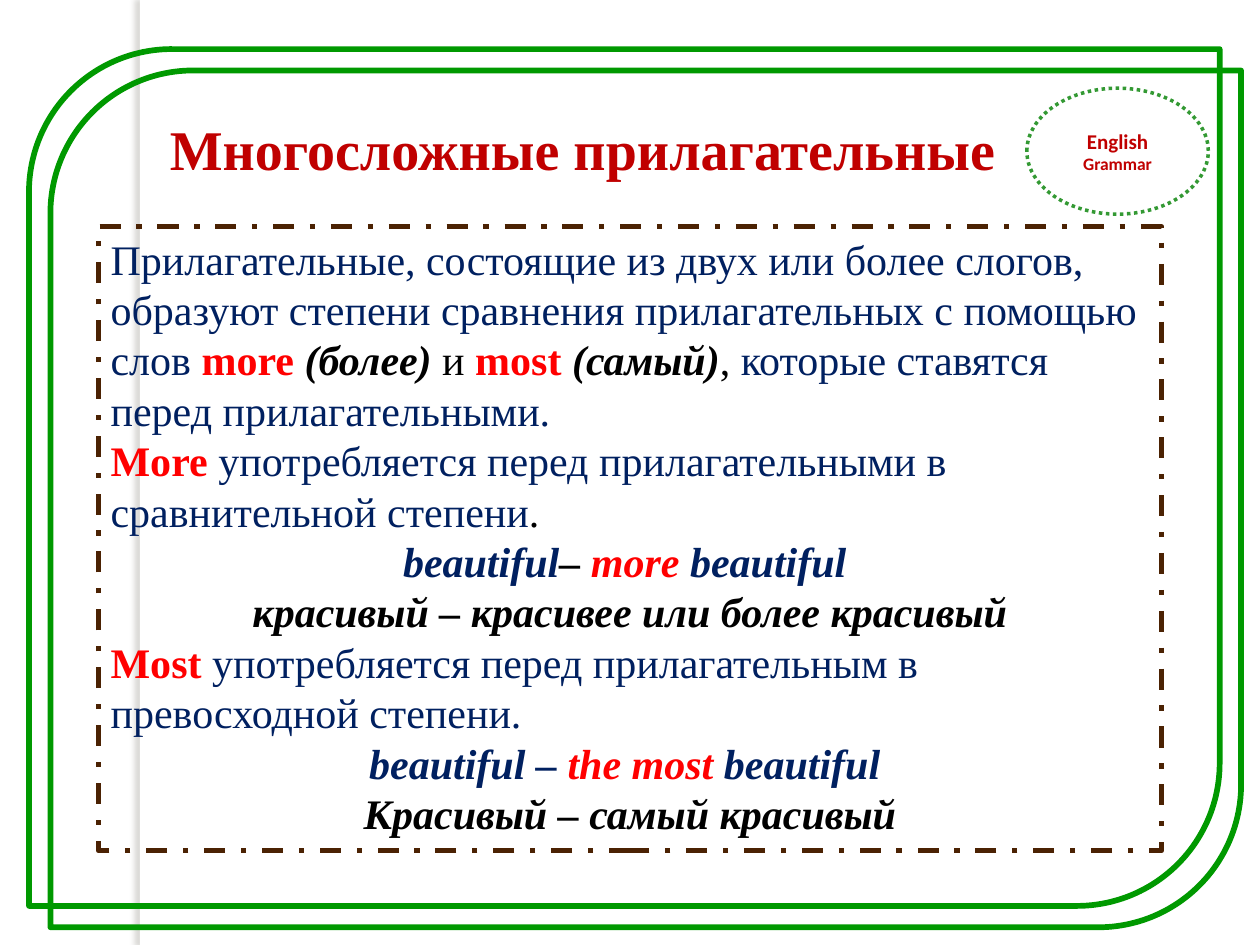
from lxml import etree
from pptx import Presentation
from pptx.dml.color import RGBColor
from pptx.enum.dml import MSO_LINE_DASH_STYLE as DASH
from pptx.enum.shapes import MSO_SHAPE as SHAPE
from pptx.enum.text import MSO_ANCHOR as ANCHOR, MSO_AUTO_SIZE as AUTO, PP_ALIGN as ALIGN
from pptx.oxml.ns import qn
from pptx.util import Inches, Pt

WHITE = RGBColor(0xFF, 0xFF, 0xFF)
BLACK = RGBColor(0, 0, 0)
NAVY = RGBColor(0x00, 0x20, 0x60)
RED = RGBColor(0xFF, 0, 0)
CRIMSON = RGBColor(0xC0, 0, 0)
GREEN = RGBColor(0, 0x99, 0)
BADGE_GREEN = RGBColor(0x33, 0x99, 0x33)
BROWN = RGBColor(0x4B, 0x22, 0x03)
SHADOW = RGBColor(0x73, 0x6F, 0x63)

SERIF, SANS = "Times New Roman", "Calibri"
LEFT, CENTER = ALIGN.LEFT, ALIGN.CENTER

# Each paragraph: alignment, then runs of (text, colour, style letters)
RULES = [
    (LEFT, [("Прилагательные, состоящие из двух или более слогов, образуют степени "
             "сравнения прилагательных с помощью слов ", NAVY, ""),
            ("more ", RED, "b"), ("(более) ", BLACK, "bi"), ("и ", BLACK, ""),
            ("most ", RED, "b"), ("(самый)", BLACK, "bi"), (", ", BLACK, ""),
            ("которые ставятся перед прилагательными.", NAVY, "")]),
    (LEFT, [("More ", RED, "b"),
            ("употребляется перед прилагательными в сравнительной степени", NAVY, ""),
            (".", BLACK, "")]),
    (CENTER, [("beautiful", NAVY, "bi"), ("– ", BLACK, "bi"),
              ("more ", RED, "bi"), ("beautiful ", NAVY, "bi")]),
    (CENTER, [("красивый – красивее или более красивый", BLACK, "bi")]),
    (LEFT, [("Most ", RED, "b"),
            ("употребляется перед прилагательным в превосходной степени.", NAVY, "")]),
    (CENTER, [("beautiful – ", NAVY, "bi"), ("the most ", RED, "bi"),
              ("beautiful ", NAVY, "bi")]),
    (CENTER, [("Красивый – самый красивый", BLACK, "bi")]),
]


class Deck:
    def __init__(self, width, height):
        self.prs = Presentation()
        self.prs.slide_width, self.prs.slide_height = Inches(width), Inches(height)
        self.s = self.prs.slides.add_slide(self.prs.slide_layouts[6])

    def shape(self, kind, box, fill=None, line=None, weight=1, dash=None):
        sp = self.s.shapes.add_shape(kind, *map(Inches, box))
        sp.shadow.inherit = False
        if fill is None:
            sp.fill.background()
        else:
            sp.fill.solid()
            sp.fill.fore_color.rgb = fill
        if line is None:
            sp.line.fill.background()
        else:
            sp.line.color.rgb = line
            sp.line.width = Pt(weight)
            if dash is not None:
                sp.line.dash_style = dash
        return sp

    def text_box(self, box):
        return self.s.shapes.add_textbox(*map(Inches, box))

    def drop_shadow(self, sp, color, opacity, blur, distance, angle):
        """Outer shadow: opacity in percent, blur and distance in points."""
        effects = sp.element.spPr.find(qn("a:effectLst"))
        outer = etree.SubElement(effects, qn("a:outerShdw"), blurRad=str(Pt(blur)),
                                 dist=str(Pt(distance)), dir=str(angle * 60000),
                                 algn="ctr", rotWithShape="0")
        clr = etree.SubElement(outer, qn("a:srgbClr"), val=str(color))
        etree.SubElement(clr, qn("a:alpha"), val=str(opacity * 1000))

    def add_text(self, sp, paragraphs, font, sizes, anchor=ANCHOR.TOP, auto=AUTO.NONE):
        """Fill a shape with text; sizes holds one size per paragraph."""
        tf = sp.text_frame
        tf.word_wrap, tf.auto_size, tf.vertical_anchor = True, auto, anchor
        for i, ((align, runs), size) in enumerate(zip(paragraphs, sizes)):
            p = tf.add_paragraph() if i else tf.paragraphs[0]
            p.alignment = align
            for text, color, style in runs:
                r = p.add_run()
                r.text = text
                r.font.name, r.font.size = font, Pt(size)
                r.font.color.rgb = color
                r.font.bold, r.font.italic = "b" in style, "i" in style


def main():
    deck = Deck(10, 7.5)

    strip = deck.shape(SHAPE.RECTANGLE, (1.11, 0, 0.08, 7.5), fill=WHITE)
    deck.drop_shadow(strip, SHADOW, opacity=25, blur=3, distance=3, angle=180)

    for offset in (0, 0.17):
        deck.shape(SHAPE.ROUND_2_DIAG_RECTANGLE, (0.23 + offset, 0.39 + offset, 9.45, 6.8),
                   line=GREEN, weight=3.25)

    badge = deck.shape(SHAPE.OVAL, (8.15, 0.7, 1.44, 1), fill=WHITE,
                       line=BADGE_GREEN, weight=2, dash=DASH.ROUND_DOT)
    deck.add_text(badge, [(CENTER, [(word, CRIMSON, "b")]) for word in ("English", "Grammar")],
                  SANS, (12, 10), anchor=ANCHOR.MIDDLE)

    rules = deck.shape(SHAPE.RECTANGLE, (0.78, 1.8, 8.44, 4.95),
                       line=BROWN, weight=3, dash=DASH.DASH_DOT)
    deck.add_text(rules, RULES, SERIF, [24] * len(RULES), auto=AUTO.SHAPE_TO_FIT_TEXT)

    title = deck.text_box((1.25, 0.86, 8.26, 0.64))
    deck.add_text(title, [(LEFT, [("Многосложные прилагательные", CRIMSON, "b")])],
                  SERIF, [32], auto=AUTO.SHAPE_TO_FIT_TEXT)

    deck.prs.save("out.pptx")


if __name__ == "__main__":
    main()
